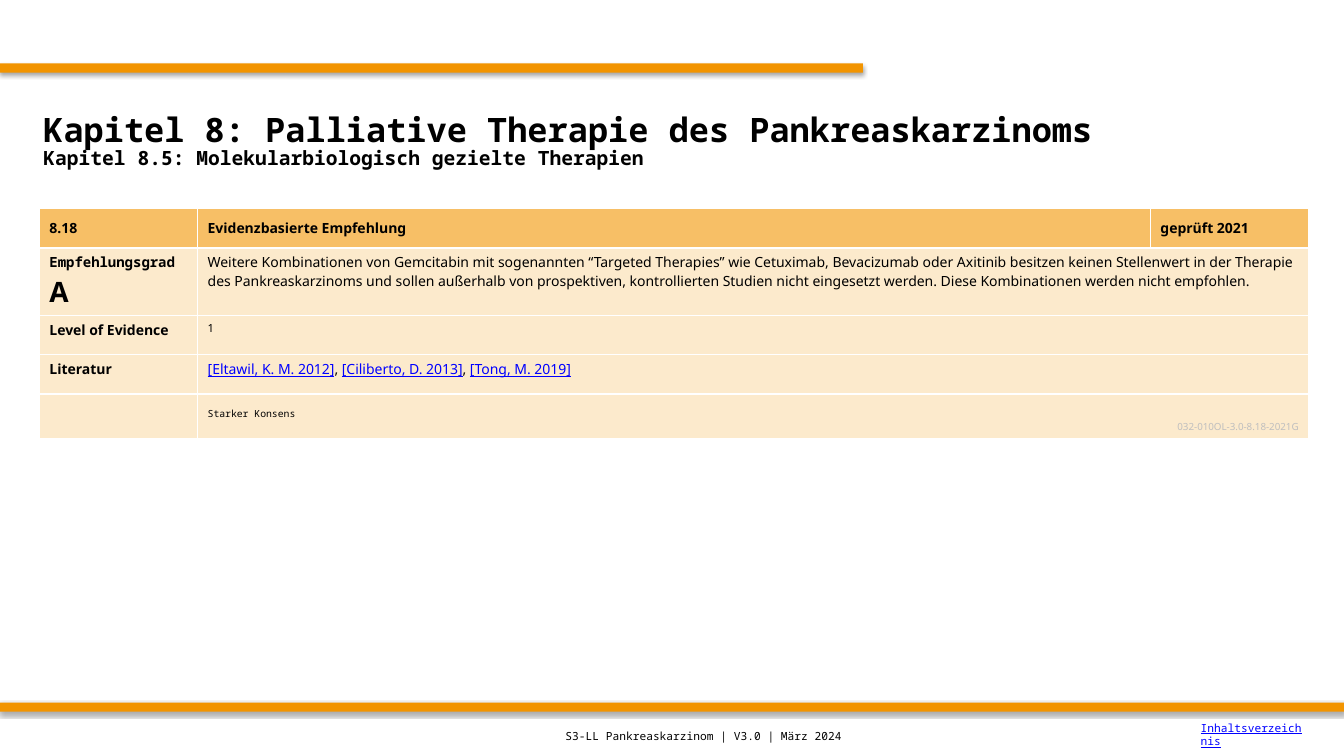
import dataclasses
import typing

import lxml.etree
import pptx
import pptx.dml.color
import pptx.enum.shapes
import pptx.enum.text
import pptx.oxml.ns
import pptx.slide
import pptx.text.text
import pptx.util

Inches = pptx.util.Inches
Anchor = pptx.enum.text.MSO_ANCHOR
Align = pptx.enum.text.PP_ALIGN

COLORS = {
    "bar": "F29400", "head": "F7BF66", "body": "FCEACC",
    "text": "000000", "link": "0000FF", "code": "BFBFBF",
}
SANS, MONO = "Noto Sans", "Noto Sans Mono"


@dataclasses.dataclass
class Run:
    text: str
    size: float = 10
    face: str = SANS
    color: str = "text"
    bold: bool = False
    line: bool = False


@dataclasses.dataclass
class Line:
    runs: list[Run]
    align: typing.Any = Align.LEFT
    space: float = 1.0


@dataclasses.dataclass
class Box:
    left: float
    top: float
    width: float
    height: float

    def place(self) -> list[int]:
        return [Inches(side) for side in dataclasses.astuple(self)]


@dataclasses.dataclass
class Row:
    height: float
    cells: list[list[Line]]
    anchors: list[typing.Any]
    fill: str = "body"


def paint(fill: typing.Any, name: str) -> None:
    fill.solid()
    fill.fore_color.rgb = pptx.dml.color.RGBColor.from_string(COLORS[name])


def bold(text: str, size: float = 10, face: str = SANS) -> Line:
    return Line([Run(text, size, face, bold=True)])


def link(text: str, size: float = 10, face: str = SANS) -> Run:
    return Run(text, size, face, "link", line=True)


def write(frame: pptx.text.text.TextFrame, lines: list[Line]) -> None:
    for index, line in enumerate(lines):
        para = frame.add_paragraph() if index else frame.paragraphs[0]
        para.alignment = line.align
        para.line_spacing = line.space
        for item in line.runs:
            run = para.add_run()
            run.text = item.text
            form = {"name": item.face, "size": pptx.util.Pt(item.size),
                    "bold": item.bold, "underline": item.line}
            for key, value in form.items():
                setattr(run.font, key, value)
            paint(run.font.fill, item.color)


def add_bar(slide: pptx.slide.Slide, box: Box) -> None:
    bar = slide.shapes.add_shape(
        pptx.enum.shapes.MSO_SHAPE.RECTANGLE, *box.place())
    paint(bar.fill, "bar")
    bar.line.fill.background()
    bar.shadow.inherit = False
    qn = pptx.oxml.ns.qn
    effects = bar.element.spPr.find(qn("a:effectLst"))
    shade = lxml.etree.SubElement(
        effects, qn("a:outerShdw"), blurRad=str(pptx.util.Pt(3.1)),
        dist=str(pptx.util.Pt(1.8)), dir="5400000", rotWithShape="0")
    black = lxml.etree.SubElement(shade, qn("a:srgbClr"), val="000000")
    lxml.etree.SubElement(black, qn("a:alpha"), val="35000")


def add_note(slide: pptx.slide.Slide, box: Box, run: Run) -> None:
    frame = slide.shapes.add_textbox(*box.place()).text_frame
    frame.word_wrap = True
    frame.vertical_anchor = Anchor.MIDDLE
    write(frame, [Line([run])])


def add_grid(slide: pptx.slide.Slide, box: Box, widths: list[float],
             rows: list[Row]) -> None:
    """Draw the table; the last cell of a short row spans the rest."""
    table = slide.shapes.add_table(
        len(rows), len(widths), *box.place()).table
    for column, width in zip(table.columns, widths):
        column.width = Inches(width)
    for index, row in enumerate(rows):
        table.rows[index].height = Inches(row.height)
        for place in range(len(widths)):
            paint(table.cell(index, place).fill, row.fill)
        last = len(row.cells) - 1
        if last < len(widths) - 1:
            table.cell(index, last).merge(
                table.cell(index, len(widths) - 1))
        for place, lines in enumerate(row.cells):
            cell = table.cell(index, place)
            cell.vertical_anchor = row.anchors[place]
            write(cell.text_frame, lines)


BARS = [Box(0, 0.63, 8.56, 0.09), Box(0, 6.97, 13.33, 0.09)]
TITLE = [
    bold("Kapitel 8: Palliative Therapie des Pankreaskarzinoms", 24, MONO),
    bold("Kapitel 8.5: Molekularbiologisch gezielte Therapien", 14, MONO),
]
for line in TITLE:
    line.space = 0.85

ADVICE = (
    "Weitere Kombinationen von Gemcitabin mit sogenannten “Targeted "
    "Therapies” wie Cetuximab, Bevacizumab oder Axitinib besitzen keinen "
    "Stellenwert in der Therapie des Pankreaskarzinoms und sollen außerhalb "
    "von prospektiven, kontrollierten Studien nicht eingesetzt werden. "
    "Diese Kombinationen werden nicht empfohlen."
)
SOURCES = [
    link("[Eltawil, K. M. 2012]"), Run(", "),
    link("[Ciliberto, D. 2013]"), Run(", "), link("[Tong, M. 2019]"),
]
TOP = [Anchor.TOP] * 2
ROWS = [
    Row(0.39, [[bold("8.18")], [bold("Evidenzbasierte Empfehlung")],
               [bold("geprüft 2021")]], [Anchor.MIDDLE] * 3, "head"),
    Row(0.67, [[bold("Empfehlungsgrad", face=MONO), bold("A", 20)],
               [Line([Run(ADVICE)])]], TOP),
    Row(0.39, [[bold("Level of Evidence")], [Line([Run("1", 8)])]], TOP),
    Row(0.39, [[bold("Literatur")], [Line(SOURCES)]], TOP),
    Row(0.44, [[], [Line([Run("Starker Konsens", 7, MONO)]),
                    Line([Run("032-010OL-3.0-8.18-2021G", 7, color="code")],
                         Align.RIGHT)]], [Anchor.TOP, Anchor.BOTTOM]),
]
NOTES = [
    (Box(5.51, 7.11, 5.51, 0.39),
     Run("S3-LL Pankreaskarzinom | V3.0 | März 2024", 8, MONO)),
    (Box(11.81, 7.09, 1.22, 0.39), link("Inhaltsverzeichnis", 8, MONO)),
]


def main() -> None:
    deck = pptx.Presentation()
    deck.slide_width, deck.slide_height = Inches(13.33), Inches(7.5)
    slide = deck.slides.add_slide(deck.slide_layouts[5])
    for box in BARS:
        add_bar(slide, box)
    title = slide.shapes.title
    spot = Box(0.33, 0.83, 12.67, 1.17).place()
    for key, value in zip(("left", "top", "width", "height"), spot):
        setattr(title, key, value)
    title.text_frame.vertical_anchor = Anchor.MIDDLE
    title.text_frame.auto_size = pptx.enum.text.MSO_AUTO_SIZE.NONE
    write(title.text_frame, TITLE)
    height = sum(row.height for row in ROWS)
    add_grid(slide, Box(0.39, 2.07, 12.59, height), [1.57, 9.45, 1.57], ROWS)
    for box, run in NOTES:
        add_note(slide, box, run)
    deck.save("out.pptx")


if __name__ == "__main__":
    main()
